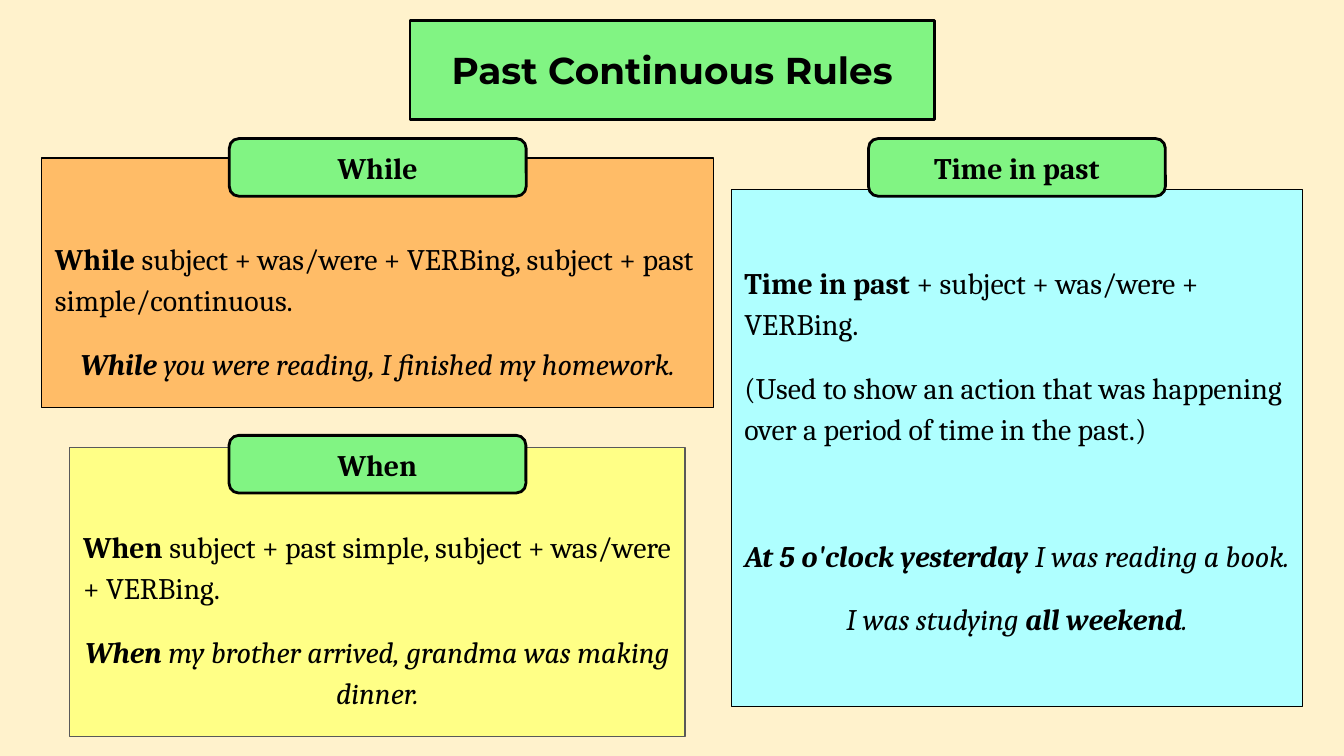
from pptx import Presentation
from pptx.dml.color import RGBColor
from pptx.enum.shapes import MSO_SHAPE
from pptx.enum.text import MSO_ANCHOR, MSO_AUTO_SIZE, PP_ALIGN
from pptx.oxml import parse_xml
from pptx.oxml.ns import nsdecls
from pptx.util import Cm, Pt

HEX = {"back": "FFF2CC", "green": "81F483", "orange": "FFBC67",
       "yellow": "FFFF86", "aqua": "AFFFFF", "black": "000000", "gray": "595959"}
BODY = {"name": "Cambria", "size": Pt(16)}
HEAD = {"name": "Montserrat", "size": Pt(20), "bold": True}
TAG = {**BODY, "bold": True}
TAG_W, TAG_H, TAG_TOP = 5.61, 1.09, 2.62
PAD = 0.25
ROUND = 0.167


def rgb(key):
    return RGBColor.from_string(HEX[key])


def put(item, values):
    for key, value in values.items():
        setattr(item, key, value)


def paint(shape, fill, line, width):
    shape.fill.solid()
    shape.fill.fore_color.rgb = rgb(fill)
    shape.line.color.rgb = rgb(line)
    shape.line.width = Pt(width)


def frame(shape, top=PAD, low=PAD):
    put(shape.text_frame, {
        "word_wrap": True, "auto_size": MSO_AUTO_SIZE.NONE,
        "vertical_anchor": MSO_ANCHOR.MIDDLE,
        "margin_left": Cm(PAD), "margin_right": Cm(PAD),
        "margin_top": Cm(top), "margin_bottom": Cm(low)})


def write(para, text, font):
    run = para.add_run()
    run.text = text
    put(run.font, font)
    run.font.color.rgb = rgb("black")


def block(slide, kind, box, fill, line, width):
    shape = slide.shapes.add_shape(kind, *map(Cm, box))
    shape.shadow.inherit = False
    paint(shape, fill, line, width)
    return shape


def title(slide, box, text):
    shape = slide.shapes.title
    put(shape, dict(zip(("left", "top", "width", "height"), map(Cm, box))))
    # Rounded outline for the placeholder
    shape._element.spPr.xfrm.addnext(parse_xml(
        f'<a:prstGeom {nsdecls("a")} prst="roundRect"><a:avLst>'
        f'<a:gd name="adj" fmla="val {ROUND * 100000:.0f}"/>'
        '</a:avLst></a:prstGeom>'))
    paint(shape, "green", "black", 1.5)
    frame(shape)
    para = shape.text_frame.paragraphs[0]
    put(para, {"alignment": PP_ALIGN.CENTER, "line_spacing": 1.0})
    write(para, text, HEAD)


def tag(slide, box, text):
    shape = block(slide, MSO_SHAPE.ROUNDED_RECTANGLE, box, "green", "black", 1.5)
    shape.adjustments[0] = ROUND
    frame(shape)
    para = shape.text_frame.paragraphs[0]
    para.alignment = PP_ALIGN.CENTER
    write(para, text, TAG)


def panel(slide, box, fill, line, label, tag_top, pads, paras):
    """Rule box with a tag centred over its top edge."""
    left, _, width, _ = box
    shape = block(slide, MSO_SHAPE.RECTANGLE, box, fill, line, 0.75)
    frame(shape, *pads)
    text = shape.text_frame
    for i, (sample, gap, runs) in enumerate(paras):
        para = text.add_paragraph() if i else text.paragraphs[0]
        put(para, {"alignment": PP_ALIGN.CENTER if sample else PP_ALIGN.LEFT,
                   "line_spacing": 1.15, "space_before": Pt(gap),
                   "space_after": Pt(12 if i == len(paras) - 1 else 0)})
        for words, bold in runs:
            write(para, words, {**BODY, "bold": bold, "italic": sample})
    tag(slide, (left + (width - TAG_W) / 2, tag_top, TAG_W, TAG_H), label)


def main():
    deck = Presentation()
    put(deck, {"slide_width": Cm(25.4), "slide_height": Cm(14.29)})
    slide = deck.slides.add_slide(deck.slide_layouts[5])
    slide.background.fill.solid()
    slide.background.fill.fore_color.rgb = rgb("back")

    # Heading
    title(slide, (7.75, 0.38, 9.91, 1.88), "Past Continuous Rules")

    # Left column: the text sits low, clear of the tag
    low = (0.95, 0)
    panel(slide, (0.79, 2.99, 12.7, 4.72), "orange", "black", "While", TAG_TOP, low, [
        (False, 0, [("While", True),
                    (" subject + was/were + VERBing, subject + past simple/continuous.", False)]),
        (True, 12, [("While", True),
                    (" you were reading, I finished my homework.", False)])])
    panel(slide, (1.32, 8.46, 11.63, 5.46), "yellow", "gray", "When", 8.23, low, [
        (False, 0, [("When", True),
                    (" subject + past simple, subject + was/were + VERBing.", False)]),
        (True, 12, [("When", True),
                    (" my brother arrived, grandma was making dinner.", False)])])

    # Right column
    panel(slide, (13.82, 3.58, 10.8, 9.78), "aqua", "black", "Time in past", TAG_TOP, (PAD, PAD), [
        (False, 0, [("Time in past ", True), ("+ subject + was/were + VERBing.", False)]),
        (False, 12, [("(Used to show an action that was happening over a period of time in the past.)", False)]),
        (True, 46, [("At 5 o'clock yesterday", True), (" I was reading a book.", False)]),
        (True, 12, [("I was studying ", False), ("all weekend", True), (".", False)])])

    deck.save("out.pptx")


if __name__ == "__main__":
    main()
